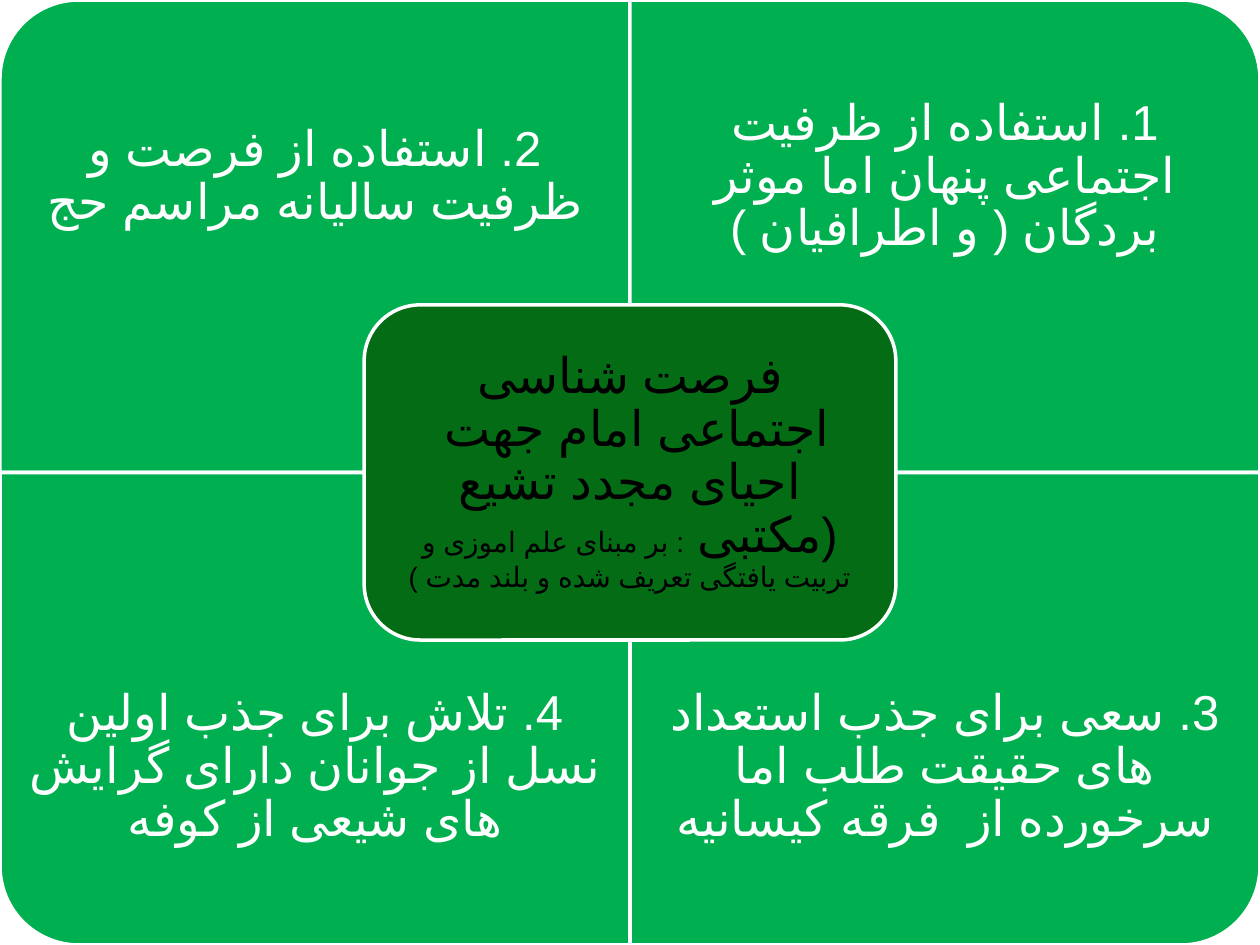
from lxml import etree
from pptx import Presentation
from pptx.dml.color import RGBColor
from pptx.enum.shapes import MSO_SHAPE
from pptx.enum.text import MSO_ANCHOR, PP_ALIGN
from pptx.oxml.ns import qn
from pptx.util import Inches, Pt

GREEN = RGBColor(0x00, 0xB0, 0x50)
DARK_GREEN = RGBColor(0x04, 0x6C, 0x15)
WHITE = RGBColor(0xFF, 0xFF, 0xFF)
BLACK = RGBColor(0x00, 0x00, 0x00)

WIDTH, HEIGHT = 10, 7.5
TILE_WIDTH, TILE_HEIGHT = WIDTH / 2, HEIGHT / 2
TEXT_HEIGHT = TILE_HEIGHT * 0.75


def add_panel(kind, left, top, width, height, fill, rotation=0):
    shape = diagram.shapes.add_shape(
        kind, Inches(left), Inches(top), Inches(width), Inches(height))
    shape.rotation = rotation
    shape.shadow.inherit = False
    shape.fill.solid()
    shape.fill.fore_color.rgb = fill
    shape.line.color.rgb = WHITE
    shape.line.width = Pt(2)


def add_label(left, top, width, height, margin, color, runs):
    box = diagram.shapes.add_textbox(
        Inches(left), Inches(top), Inches(width), Inches(height))
    frame = box.text_frame
    frame_format = {"word_wrap": True, "vertical_anchor": MSO_ANCHOR.MIDDLE}
    for side in ("left", "top", "right", "bottom"):
        frame_format[f"margin_{side}"] = Inches(margin)
    for name, value in frame_format.items():
        setattr(frame, name, value)
    paragraph = frame.paragraphs[0]
    paragraph_format = {"alignment": PP_ALIGN.CENTER, "line_spacing": 0.9,
                        "space_after": Pt(10)}
    for name, value in paragraph_format.items():
        setattr(paragraph, name, value)
    paragraph._p.get_or_add_pPr().set("rtl", "1")
    for text, size in runs:
        run = paragraph.add_run()
        run.text = text
        run.font.name = "Cabin"
        run.font.size = Pt(size)
        run.font.color.rgb = color
        # Persian text uses the complex-script font and language
        properties = run._r.get_or_add_rPr()
        properties.set("lang", "fa-IR")
        etree.SubElement(properties, qn("a:cs")).set("typeface", "Arial")


presentation = Presentation()
presentation.slide_width = Inches(WIDTH)
presentation.slide_height = Inches(HEIGHT)
slide = presentation.slides.add_slide(presentation.slide_layouts[6])
diagram = slide.shapes.add_group_shape()

# Four quadrants: column, row, rotation that turns the round corner outwards
quadrants = [
    (0, 0, 270, "2. استفاده از فرصت و ظرفیت سالیانه مراسم حج"),
    (1, 0, 0, "1. استفاده از ظرفیت اجتماعی پنهان اما موثر بردگان ( و اطرافیان )"),
    (0, 1, 180, "4. تلاش برای جذب اولین نسل از جوانان دارای گرایش های شیعی از کوفه"),
    (1, 1, 90, "3. سعی برای جذب استعداد های حقیقت طلب اما سرخورده از  فرقه کیسانیه"),
]
for column, row, rotation, text in quadrants:
    # A quarter turn swaps width and height around the same centre
    width, height = TILE_WIDTH, TILE_HEIGHT
    if rotation % 180:
        width, height = height, width
    left = (column + 0.5) * TILE_WIDTH - width / 2
    top = (row + 0.5) * TILE_HEIGHT - height / 2
    add_panel(MSO_SHAPE.ROUND_1_RECTANGLE, left, top, width, height, GREEN, rotation)
    add_label(column * TILE_WIDTH, row * (HEIGHT - TEXT_HEIGHT),
              TILE_WIDTH, TEXT_HEIGHT, 0.22, WHITE, [(text, 28)])

# Central topic
add_panel(MSO_SHAPE.ROUNDED_RECTANGLE, 2.89, 2.42, 4.22, 2.66, DARK_GREEN)
add_label(3.02, 2.55, 3.96, 2.4, 0.12, BLACK, [
    ("فرصت شناسی اجتماعی امام جهت  احیای مجدد تشیع (مکتبی ", 28),
    (": بر مبنای علم اموزی و تربیت یافتگی تعریف شده و بلند مدت )", 16),
])

presentation.save("out.pptx")
